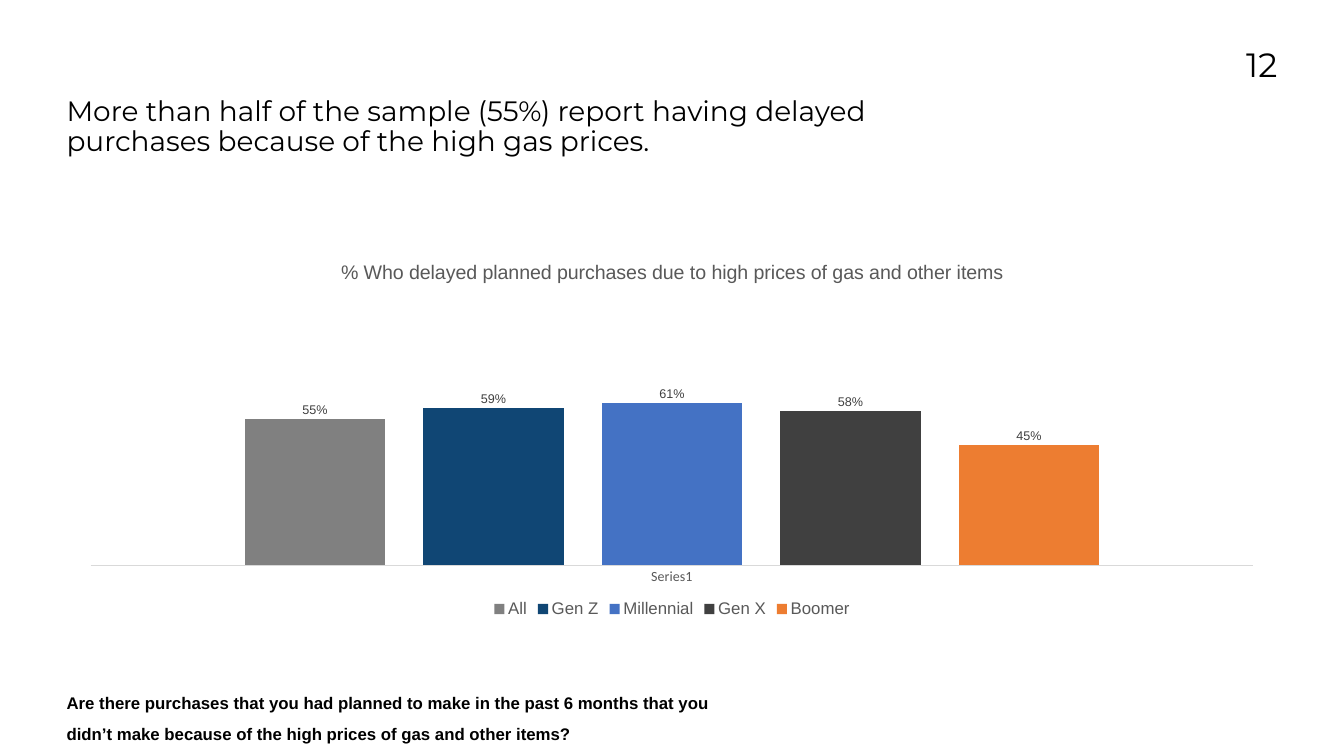
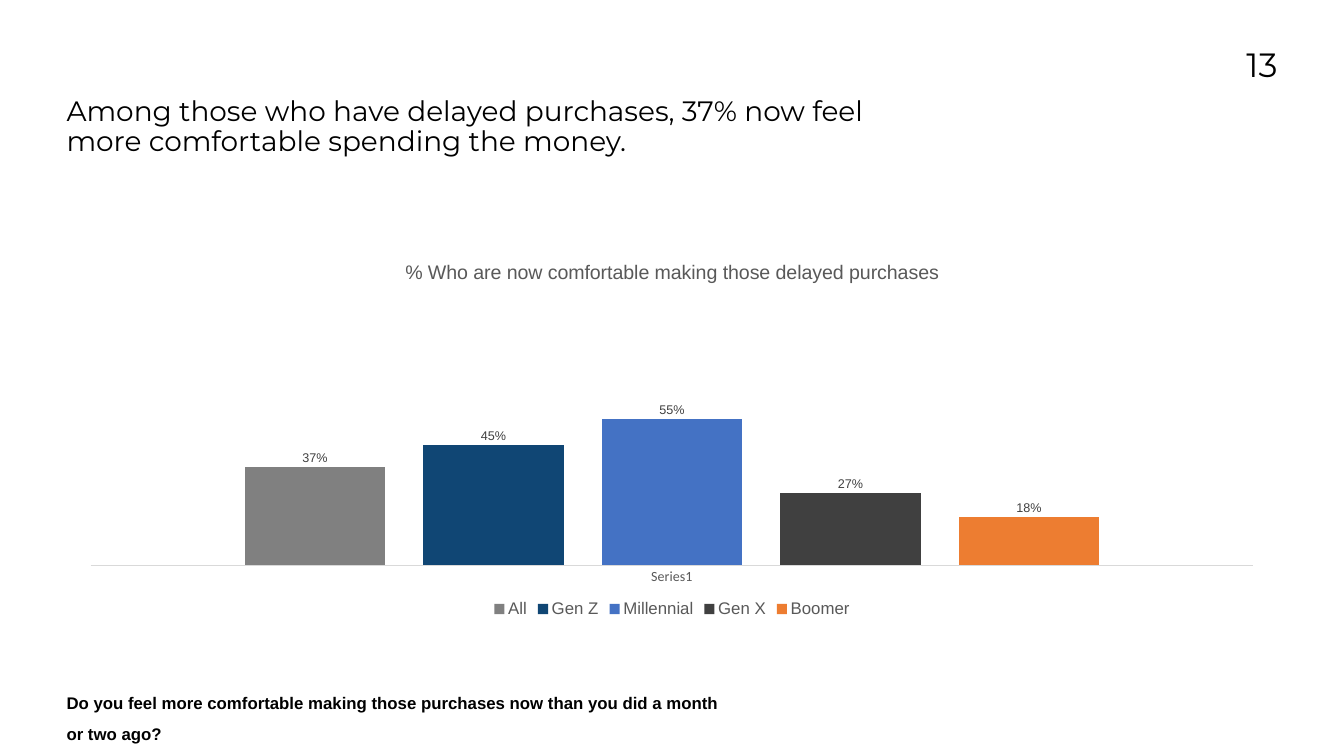
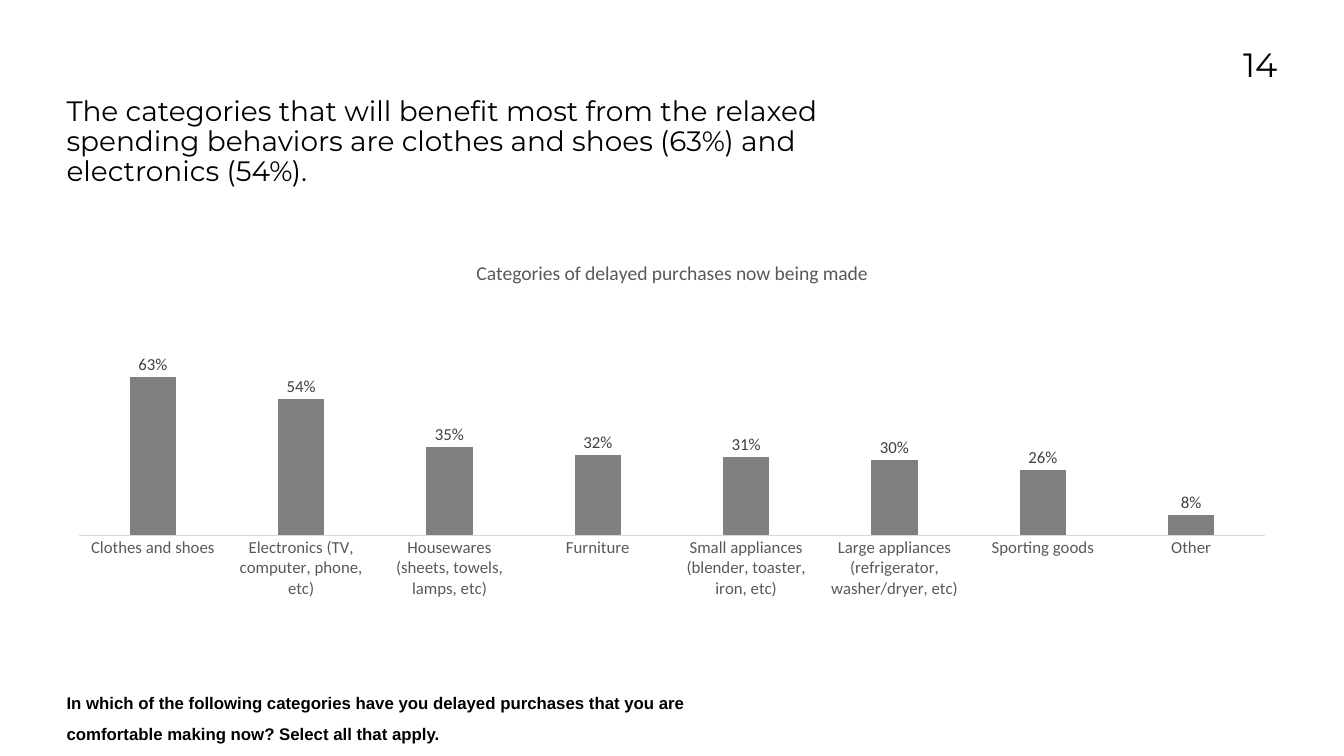
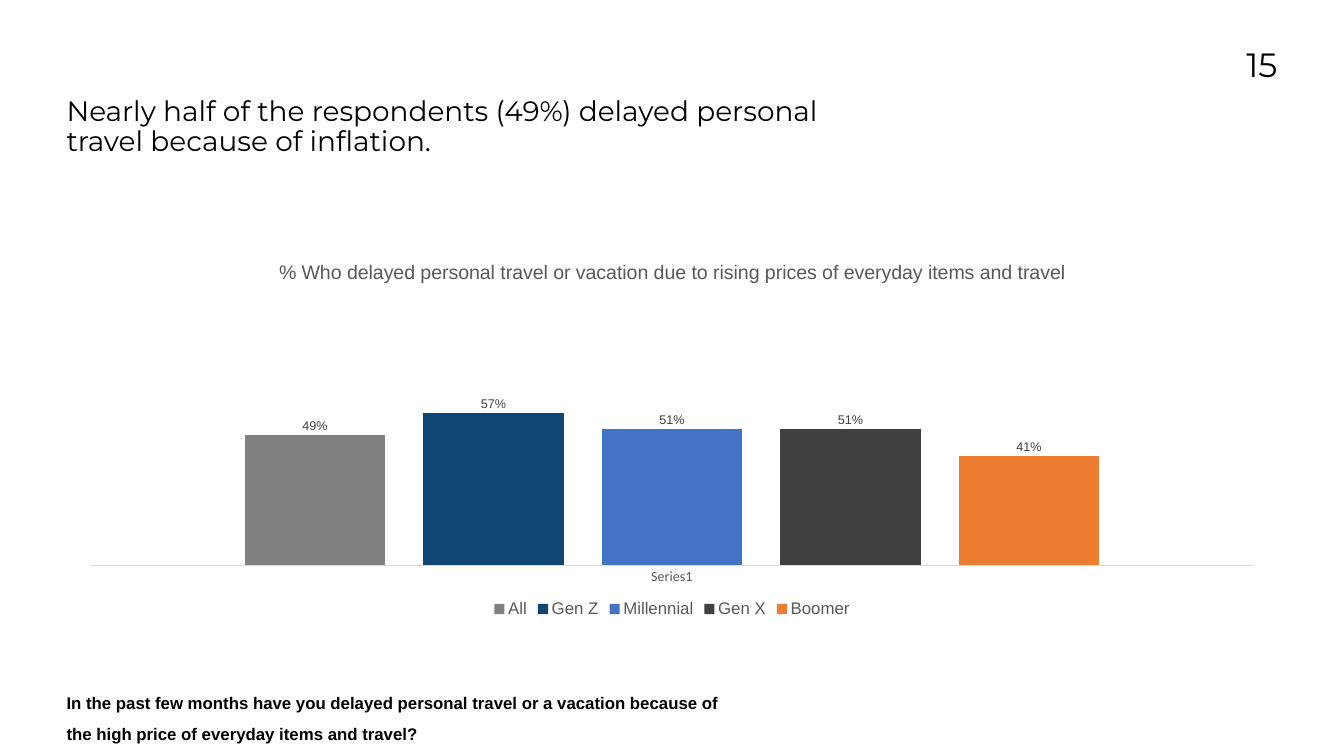
from dataclasses import dataclass

from pptx import Presentation
from pptx import util as u
from pptx.chart import data as chart_data
from pptx.dml import color
from pptx.enum import chart as ce, text


@dataclass(frozen=True)
class Theme:
    black: str = "000000"
    title_grey: str = "595959"
    label_grey: str = "404040"
    axis_grey: str = "D9D9D9"
    bars: tuple = ("808080", "104674", "4472C4", "404040", "ED7D31")
    display: str = "Montserrat"
    body: str = "Arial"
    plain: str = "Calibri"
    number_size: int = 48
    headline_size: int = 40
    chart_title_size: int = 28
    note_size: int = 24
    axis_size: int = 20
    label_size: int = 18


THEME = Theme()
SLIDE_WIDTH, SLIDE_HEIGHT = u.Inches(26.67), u.Inches(15)
COLUMN, ROW = SLIDE_WIDTH / 100, SLIDE_HEIGHT / 100
MARGIN = 4.95
FULL = 100 - 2 * MARGIN
NUMBER_WIDTH = 8.44
NUMBER_BOX = (100 - MARGIN - NUMBER_WIDTH, 5.87, NUMBER_WIDTH, 10.93)
HEADLINE_BOX = (MARGIN, 12.87, 60.03, 13.87)
CHART_BOX = (MARGIN, 32.53, FULL, 49.73)
QUESTION_BOX = (MARGIN, 90.33, 49.76, 4.33)
WIDE_QUESTION_BOX = (MARGIN, 90.33, 51.37, 4.33)
FIRST_NUMBER = 12

GENERATIONS = ("All", "Gen Z", "Millennial", "Gen X", "Boomer")
PURCHASES = {
    "Clothes and shoes": 0.63,
    "Electronics (TV, computer, phone, etc)": 0.54,
    "Housewares (sheets, towels, lamps, etc)": 0.35,
    "Furniture": 0.32,
    "Small appliances (blender, toaster, iron, etc)": 0.31,
    "Large appliances (refrigerator, washer/dryer, etc)": 0.3,
    "Sporting goods": 0.26,
    "Other": 0.08,
}


def set_all(target, **values):
    for name, value in values.items():
        setattr(target, name, value)


def style_font(font, name, size, rgb, bold=False):
    set_all(font, name=name, size=u.Pt(size), bold=bold)
    font.color.rgb = color.RGBColor.from_string(rgb)


def on_grid(box):
    left, top, width, height = box
    return [round(n) for n in (left * COLUMN, top * ROW, width * COLUMN, height * ROW)]


def write(shape, words, font, size, align=text.PP_ALIGN.LEFT, spacing=1.0, bold=False):
    frame = shape.text_frame
    set_all(frame, margin_left=0, margin_top=0, margin_right=0, margin_bottom=0,
            word_wrap=True, auto_size=text.MSO_AUTO_SIZE.NONE,
            vertical_anchor=text.MSO_ANCHOR.TOP)
    para = frame.paragraphs[0]
    set_all(para, alignment=align, line_spacing=spacing)
    span = para.add_run()
    span.text = words
    style_font(span.font, font, size, THEME.black, bold)


def add_headline(page, box, words):
    title = page.shapes.title
    set_all(title, **dict(zip(("left", "top", "width", "height"), on_grid(box))))
    write(title, words, THEME.display, THEME.headline_size, spacing=0.9)


def add_page_number(page, box, number):
    write(page.shapes.add_textbox(*on_grid(box)), str(number),
          THEME.display, THEME.number_size, align=text.PP_ALIGN.RIGHT)


def add_question(page, box, words):
    write(page.shapes.add_textbox(*on_grid(box)), words,
          THEME.body, THEME.note_size, spacing=1.5, bold=True)


def fix_plot_area(chart, shares):
    plot_area = chart.plots[0]._element.getparent()
    for old in plot_area.findall("{*}layout"):
        plot_area.remove(old)
    layout = plot_area.makeelement(plot_area.tag.replace("plotArea", "layout"), {})
    plot_area.insert(0, layout)
    manual = layout.makeelement(layout.tag.replace("layout", "manualLayout"), {})
    layout.append(manual)
    settings = {"layoutTarget": "inner", "xMode": "edge", "yMode": "edge"}
    settings.update(zip("xywh", shares))
    for name, value in settings.items():
        manual.append(manual.makeelement(
            manual.tag.replace("manualLayout", name), {"val": str(value)}))


def add_columns(page, box, heading, categories, series, plot_shares,
                title_font, label_font, label_size, axis_size, legend):
    data = chart_data.CategoryChartData(number_format="0%")
    data.categories = categories
    for name, values in series.items():
        data.add_series(name, values)
    chart = page.shapes.add_chart(
        ce.XL_CHART_TYPE.COLUMN_CLUSTERED, *on_grid(box), data).chart
    style_font(chart.font, THEME.plain, axis_size, THEME.black)

    chart.has_title = True
    span = chart.chart_title.text_frame.paragraphs[0].add_run()
    span.text = heading
    style_font(span.font, title_font, THEME.chart_title_size, THEME.title_grey)
    chart.chart_title.include_in_layout = False

    chart.has_legend = legend
    if legend:
        set_all(chart.legend, position=ce.XL_LEGEND_POSITION.BOTTOM, include_in_layout=False)
        style_font(chart.legend.font, THEME.body, THEME.note_size, THEME.title_grey)

    set_all(chart.value_axis, visible=False, has_major_gridlines=False,
            minimum_scale=0, maximum_scale=1)
    axis = chart.category_axis
    set_all(axis, major_tick_mark=ce.XL_TICK_MARK.NONE, has_major_gridlines=False)
    style_font(axis.tick_labels.font, THEME.plain, axis_size, THEME.title_grey)
    axis.format.line.width = u.Pt(0.75)
    axis.format.line.color.rgb = color.RGBColor.from_string(THEME.axis_grey)

    plot = chart.plots[0]
    set_all(plot, gap_width=219, overlap=-27, vary_by_categories=False)
    for bars, rgb in zip(plot.series, THEME.bars):
        bars.format.fill.solid()
        bars.format.fill.fore_color.rgb = color.RGBColor.from_string(rgb)
        labels = bars.data_labels
        set_all(labels, show_value=True, number_format="0%", number_format_is_linked=False,
                position=ce.XL_LABEL_POSITION.OUTSIDE_END)
        style_font(labels.font, label_font, label_size, THEME.label_grey)
    fix_plot_area(chart, plot_shares)


def add_generation_chart(page, box, heading, values):
    add_columns(page, box, heading, ["Series1"],
                {name: [value] for name, value in zip(GENERATIONS, values)},
                plot_shares=(0.02, 0.14, 0.96, 0.71), title_font=THEME.body,
                label_font=THEME.body, label_size=THEME.label_size,
                axis_size=THEME.axis_size, legend=True)


def add_purchase_chart(page, box, heading, purchases):
    add_columns(page, box, heading, list(purchases), {"Series 1": purchases.values()},
                plot_shares=(0.01, 0.1, 0.98, 0.67), title_font=THEME.plain,
                label_font=THEME.plain, label_size=THEME.note_size,
                axis_size=THEME.note_size, legend=False)


SURVEY = (
    ("More than half of the sample (55%) report having delayed purchases because of "
     "the high gas prices.",
     add_generation_chart,
     "% Who delayed planned purchases due to high prices of gas and other items",
     (0.55, 0.59, 0.61, 0.58, 0.45), QUESTION_BOX,
     "Are there purchases that you had planned to make in the past 6 months that you "
     "didn’t make because of the high prices of gas and other items?"),
    ("Among those who have delayed purchases, 37% now feel more comfortable spending "
     "the money.",
     add_generation_chart,
     "% Who are now comfortable making those delayed purchases",
     (0.37, 0.45, 0.55, 0.27, 0.18), QUESTION_BOX,
     "Do you feel more comfortable making those purchases now than you did a month "
     "or two ago?"),
    ("The categories that will benefit most from the relaxed spending behaviors are "
     "clothes and shoes (63%) and electronics (54%).",
     add_purchase_chart,
     "Categories of delayed purchases now being made",
     PURCHASES, WIDE_QUESTION_BOX,
     "In which of the following categories have you delayed purchases that you are "
     "comfortable making now? Select all that apply."),
    ("Nearly half of the respondents (49%) delayed personal travel because of inflation.",
     add_generation_chart,
     "% Who delayed personal travel or vacation due to rising prices of everyday items "
     "and travel",
     (0.49, 0.57, 0.51, 0.51, 0.41), QUESTION_BOX,
     "In the past few months have you delayed personal travel or a vacation because of "
     "the high price of everyday items and travel?"),
)


def main():
    deck = Presentation()
    set_all(deck, slide_width=SLIDE_WIDTH, slide_height=SLIDE_HEIGHT)
    layout = deck.slide_layouts.get_by_name("Title Only")
    for number, finding in enumerate(SURVEY, FIRST_NUMBER):
        headline, add_chart, heading, values, question_box, question = finding
        page = deck.slides.add_slide(layout)
        add_page_number(page, NUMBER_BOX, number)
        add_chart(page, CHART_BOX, heading, values)
        add_headline(page, HEADLINE_BOX, headline)
        add_question(page, question_box, question)
    deck.save("out.pptx")


if __name__ == "__main__":
    main()
